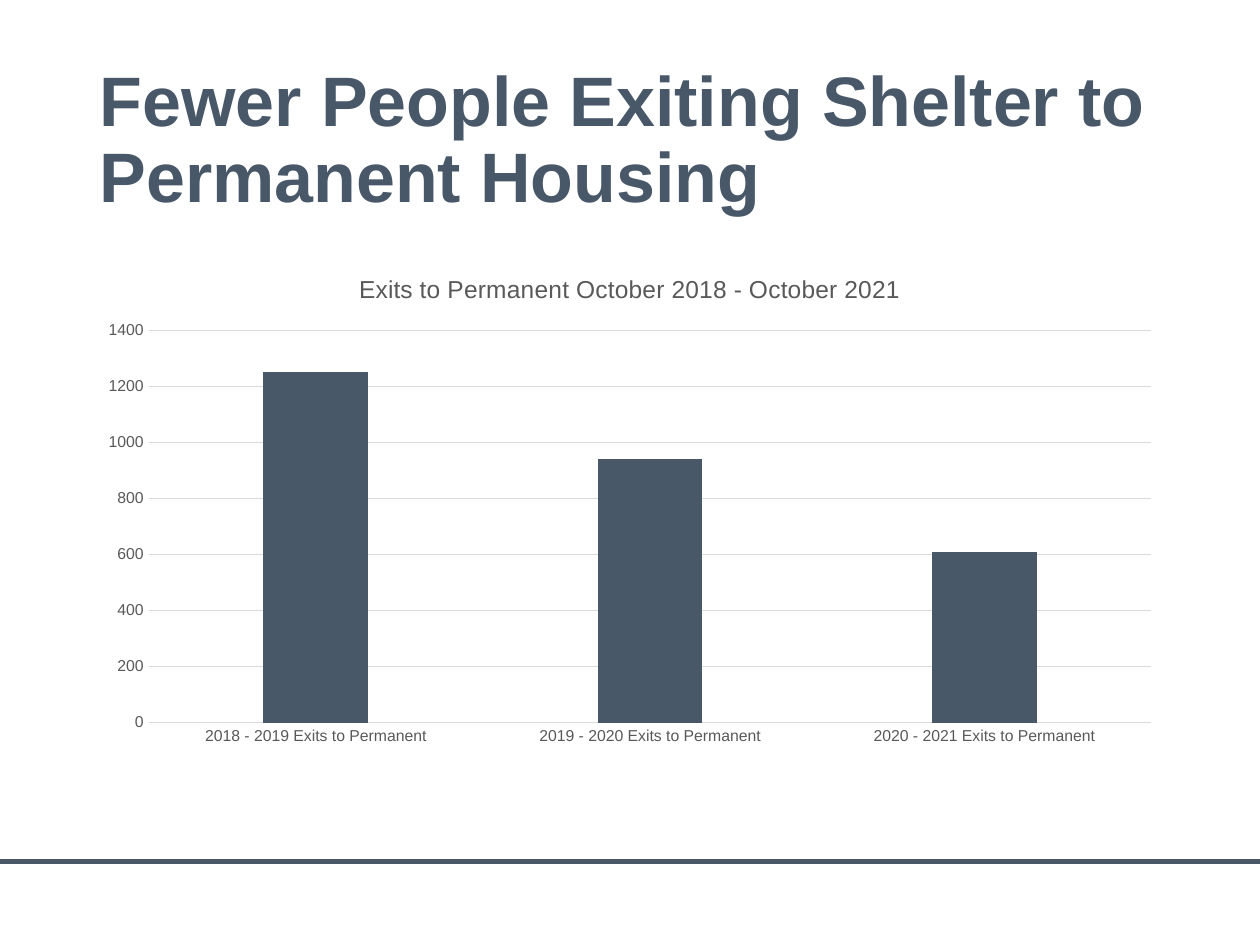
from lxml import etree
from pptx import Presentation
from pptx.chart.data import CategoryChartData
from pptx.dml.color import RGBColor
from pptx.enum.chart import XL_CHART_TYPE, XL_TICK_MARK
from pptx.enum.shapes import MSO_CONNECTOR
from pptx.enum.text import MSO_ANCHOR, MSO_AUTO_SIZE, PP_ALIGN
from pptx.oxml.ns import qn
from pptx.util import Inches, Pt

COLUMN = XL_CHART_TYPE.COLUMN_CLUSTERED
NO_TICK = XL_TICK_MARK.NONE
STRAIGHT = MSO_CONNECTOR.STRAIGHT
MIDDLE = MSO_ANCHOR.MIDDLE
NO_FIT = MSO_AUTO_SIZE.NONE
LEFT = PP_ALIGN.LEFT

COLORS = {"slate": "495869", "label": "595959", "grid": "D9D9D9", "text": "000000"}
WIDTH, HEIGHT = Inches(10), Inches(7.5)
MARGIN = 0.069  # share of the slide's width
CONTENT = 1 - 2 * MARGIN

EXITS = {
    "2018 - 2019 Exits to Permanent": 1250,
    "2019 - 2020 Exits to Permanent": 940,
    "2020 - 2021 Exits to Permanent": 610,
}


class SlideBuilder:
    """Holds the style and the current page; places take shares of the slide."""

    def __init__(self, deck):
        self.page = deck.slides.add_slide(deck.slide_layouts[5])

    def place(self, left, top, width, height):
        return [int(share * size) for share, size in
                zip((left, top, width, height), (WIDTH, HEIGHT) * 2)]

    def color(self, name):
        return RGBColor.from_string(COLORS[name])

    def style_font(self, font, size, color, bold=False):
        for name, value in {"name": "Arial", "size": Pt(size), "bold": bold}.items():
            setattr(font, name, value)
        font.color.rgb = self.color(color)

    def style_line(self, line, color, width):
        line.color.rgb = self.color(color)
        line.width = Pt(width)

    def rule(self, top, color, width):
        y = int(top * HEIGHT)
        line = self.page.shapes.add_connector(STRAIGHT, 0, y, WIDTH, y)
        self.style_line(line.line, color, width)
        etree.SubElement(line._element.spPr, qn("a:effectLst"))

    def title(self, text, *area):
        box = self.page.shapes.title
        for name, value in zip(("left", "top", "width", "height"), self.place(*area)):
            setattr(box, name, value)
        frame = box.text_frame
        frame.text = text
        formats = {"word_wrap": True, "auto_size": NO_FIT, "vertical_anchor": MIDDLE}
        for name, value in formats.items():
            setattr(frame, name, value)
        para = frame.paragraphs[0]
        para.alignment, para.line_spacing = LEFT, 0.9
        self.style_font(para.runs[0].font, 40, "slate", bold=True)

    def column_chart(self, heading, values, *area):
        data = CategoryChartData()
        data.categories = list(values)
        data.add_series("Series 1", list(values.values()))
        chart = self.page.shapes.add_chart(COLUMN, *self.place(*area), data).chart
        self.style_font(chart.font, 10, "text")
        chart.has_legend = False

        # Heading
        chart.has_title = True
        chart.chart_title.include_in_layout = False
        frame = chart.chart_title.text_frame
        frame.text = heading
        self.style_font(frame.paragraphs[0].runs[0].font, 14, "label")

        # Columns
        plot = chart.plots[0]
        formats = {"gap_width": 219, "overlap": -27, "vary_by_categories": False}
        for name, value in formats.items():
            setattr(plot, name, value)
        fill = plot.series[0].format.fill
        fill.solid()
        fill.fore_color.rgb = self.color("slate")

        # Axes and gridlines
        for axis in (chart.category_axis, chart.value_axis):
            axis.major_tick_mark = axis.minor_tick_mark = NO_TICK
            self.style_font(axis.tick_labels.font, 9, "label")
        self.style_line(chart.category_axis.format.line, "grid", 0.75)
        scale = chart.value_axis
        scale.minimum_scale, scale.maximum_scale, scale.major_unit = 0, 1400, 200
        scale.format.line.fill.background()
        self.style_line(scale.major_gridlines.format.line, "grid", 0.75)


def main():
    deck = Presentation()
    deck.slide_width, deck.slide_height = WIDTH, HEIGHT
    slide = SlideBuilder(deck)
    slide.rule(0.912, "slate", 3)
    slide.title("Fewer People Exiting Shelter to Permanent Housing",
                MARGIN, 0.4 / 7.5, CONTENT, 1.45 / 7.5)
    slide.column_chart("Exits to Permanent October 2018 - October 2021", EXITS,
                       MARGIN, 2 / 7.5, CONTENT, 4 / 7.5)
    deck.save("out.pptx")


if __name__ == "__main__":
    main()
